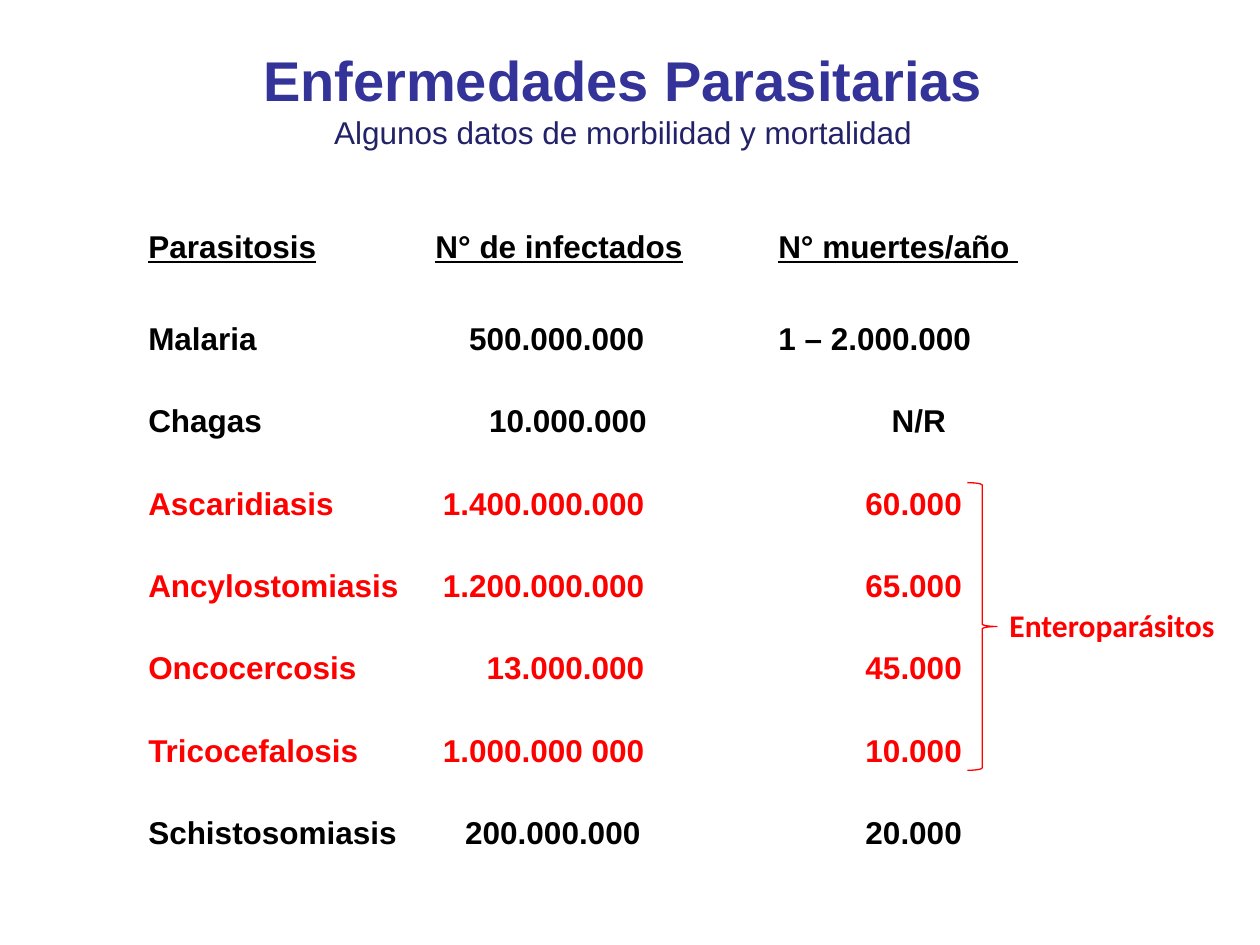
"""Builds a slide of morbidity and mortality figures for parasitic diseases."""
from dataclasses import dataclass
from typing import Any

from lxml import etree
from pptx import Presentation, util as u
from pptx.dml import color
from pptx.enum import shapes, text
from pptx.oxml import ns

BLACK, RED, WHITE = "000000", "FF0000", "FFFFFF"
LEFT, FIRST_ROW, ROW_STEP = 2.74, 6.3, 1.66
HEADINGS = ["Parasitosis", "N° de infectados", "N° muertes/año "]
HEADING_TABS = [("l", 5.79), ("l", 12.7)]
FIGURE_TABS = [("r", 10), ("r", 16.4)]
DISEASES = [
    (["Malaria", "500.000.000", "1 – 2.000.000"], BLACK, [("r", 10), ("l", 12.7)]),
    (["Chagas", "10.000.000", "N/R"], BLACK, [("r", 10.05), ("r", 16.08)]),
    (["Ascaridiasis", "1.400.000.000", "60.000"], RED, FIGURE_TABS),
    (["Ancylostomiasis", "1.200.000.000", "65.000"], RED, FIGURE_TABS),
    (["Oncocercosis", "13.000.000", "45.000"], RED, FIGURE_TABS),
    (["Tricocefalosis", "1.000.000 000", "10.000"], RED, FIGURE_TABS),
    (["Schistosomiasis", "200.000.000", "20.000"], BLACK, [("r", 9.92), ("r", 16.4)]),
]


def rgb(code):
    return color.RGBColor.from_string(code)


@dataclass
class Sheet:
    slide: Any
    face: str = "Arial"
    size: float = 18

    def style(self, run, ink, bold=True, size=None, face=None, underline=None):
        font = run.font
        font.name, font.size, font.bold = face or self.face, u.Pt(size or self.size), bold
        font.color.rgb = rgb(ink)
        font.underline = underline

    def shape(self, kind, left, top, width, height):
        item = self.slide.shapes.add_shape(
            kind, u.Cm(left), u.Cm(top), u.Cm(width), u.Cm(height))
        item.shadow.inherit = False
        return item

    def row(self, cells, top, ink, tabs, underline=None, left=LEFT, width=19.7):
        band = self.shape(shapes.MSO_SHAPE.RECTANGLE, left, top, width, 1.02)
        band.fill.solid()
        band.fill.fore_color.rgb = rgb(WHITE)
        band.line.fill.background()
        frame = band.text_frame
        frame.word_wrap = True
        frame.auto_size = text.MSO_AUTO_SIZE.SHAPE_TO_FIT_TEXT
        line = frame.paragraphs[0]
        line.alignment = text.PP_ALIGN.LEFT
        stops = etree.SubElement(line._p.get_or_add_pPr(), ns.qn("a:tabLst"))
        for align, place in tabs:
            etree.SubElement(stops, ns.qn("a:tab"), pos=str(u.Cm(place)), algn=align)
        for index, cell in enumerate(cells):
            if index:
                gap = line.add_run()
                gap.text = "\t"
                self.style(gap, ink)
            entry = line.add_run()
            entry.text = cell
            self.style(entry, ink, underline=underline)

    def label(self, lines, left, top, width, height, align, wrap=True):
        box = self.slide.shapes.add_textbox(
            u.Cm(left), u.Cm(top), u.Cm(width), u.Cm(height))
        frame = box.text_frame
        frame.word_wrap = wrap
        frame.auto_size = text.MSO_AUTO_SIZE.SHAPE_TO_FIT_TEXT
        frame.text = "\n".join(words for words, _ in lines)
        for line, (_, look) in zip(frame.paragraphs, lines):
            line.alignment = align
            self.style(line.runs[0], **look)

    def brace(self, left, top, width, height, ink):
        bracket = self.shape(shapes.MSO_SHAPE.RIGHT_BRACE, left, top, width, height)
        bracket.fill.background()
        bracket.line.color.rgb = rgb(ink)
        bracket.line.width = u.Pt(0.75)


def main():
    deck = Presentation()
    deck.slide_width, deck.slide_height = u.Cm(25.4), u.Cm(19.05)
    sheet = Sheet(deck.slides.add_slide(deck.slide_layouts[6]))

    sheet.row(HEADINGS, 4.45, BLACK, HEADING_TABS, underline=True, width=20.88)
    for index, (cells, ink, tabs) in enumerate(DISEASES):
        sheet.row(cells, FIRST_ROW + index * ROW_STEP, ink, tabs)

    sheet.label(
        [("Enfermedades Parasitarias", {"ink": "333399", "size": 32}),
         ("Algunos datos de morbilidad y mortalidad", {"ink": "222268", "bold": False})],
        3.58, 0.79, 17.96, 2.39, text.PP_ALIGN.CENTER)
    sheet.brace(19.5, 9.73, 0.6, 5.8, RED)
    sheet.label([("Enteroparásitos", {"ink": RED, "face": "Calibri"})],
                20.1, 12.1, 5.38, 1.02, text.PP_ALIGN.LEFT, wrap=False)
    deck.save("out.pptx")


if __name__ == "__main__":
    main()
